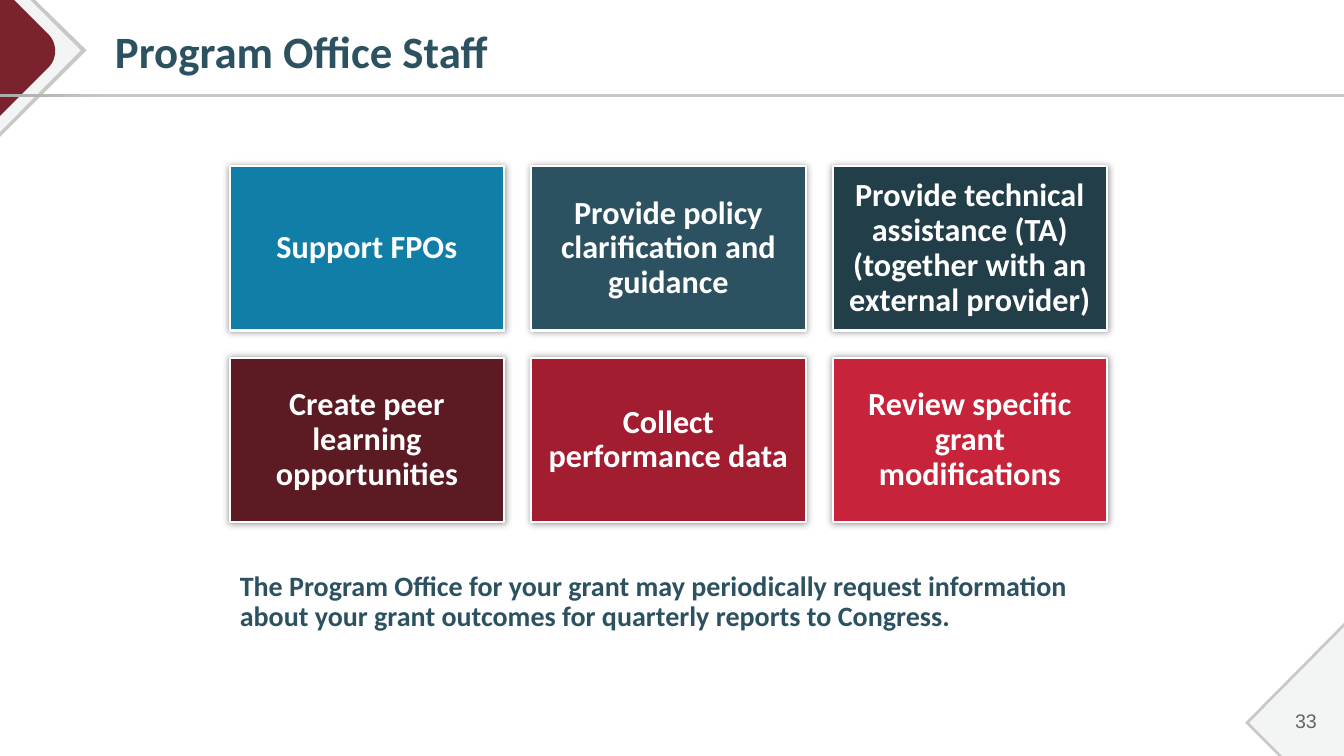
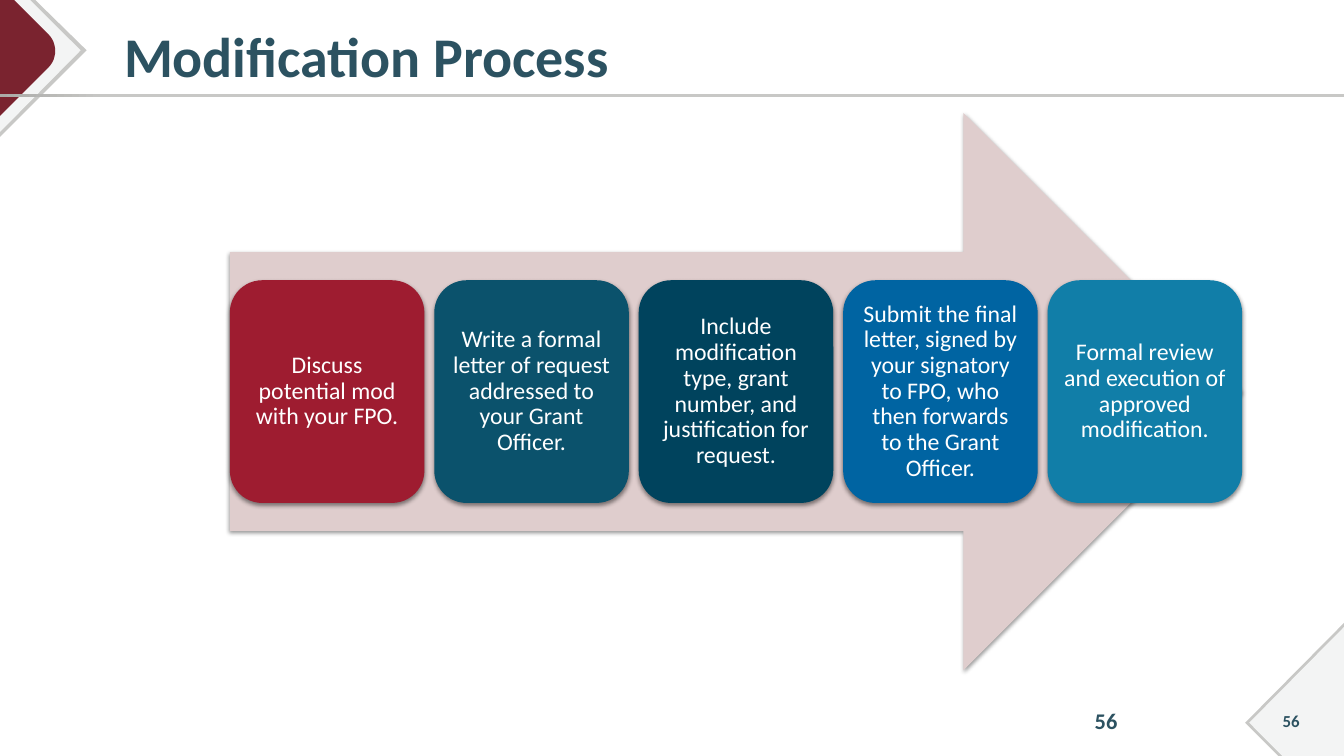
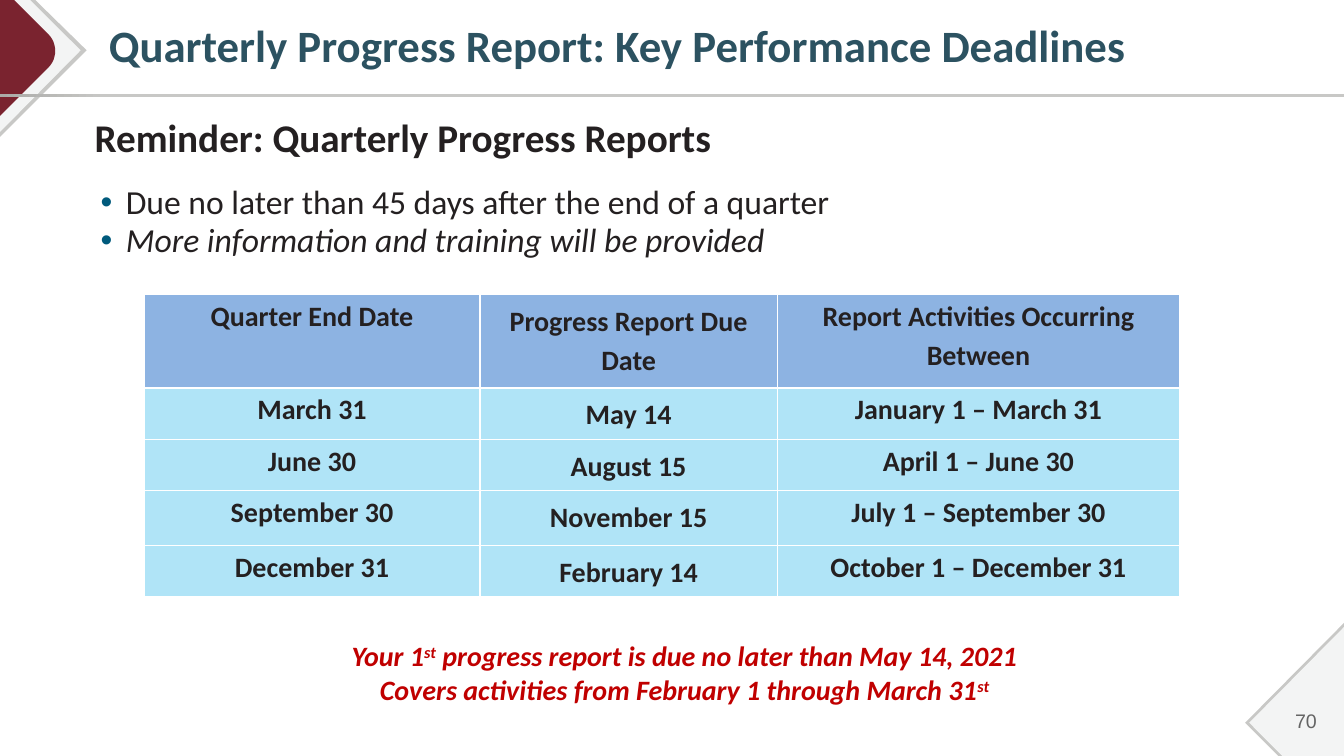
from lxml import etree
from pptx import Presentation
from pptx.dml.color import RGBColor
from pptx.enum.shapes import MSO_SHAPE
from pptx.enum.text import MSO_ANCHOR, PP_ALIGN
from pptx.oxml import parse_xml
from pptx.oxml.ns import nsdecls, qn
from pptx.util import Inches, Pt

RECT, ROUND_RECT = MSO_SHAPE.RECTANGLE, MSO_SHAPE.ROUNDED_RECTANGLE
RIGHT_ARROW = MSO_SHAPE.RIGHT_ARROW
TOP, MIDDLE = MSO_ANCHOR.TOP, MSO_ANCHOR.MIDDLE
LEFT, CENTER, RIGHT = PP_ALIGN.LEFT, PP_ALIGN.CENTER, PP_ALIGN.RIGHT

WIDTH, HEIGHT = 13.33, 7.5
SLATE, INK, WHITE, RED = "2C5261", "242021", "FFFFFF", "C00000"
SILVER, MIST, MAROON, GREY = "C8C8C6", "F3F4F4", "7A232F", "646464"
BLUE, NAVY, BULLET_BLUE = "117EA8", "00435D", "005A7C"
HEADER_FILL, ROW_FILL = "8DB3E2", "B0E4F7"

CORNERS = [
    (SILVER, [(13.33, 6.18), (13.33, 7.5), (12.68, 7.5), (12.35, 7.17)]),
    (MIST, [(13.33, 6.22), (13.33, 7.5), (12.72, 7.5), (12.39, 7.17)]),
    (SILVER, [(0, 0), (0.35, 0), (0.86, 0.5), (0, 1.36)]),
    (MIST, [(0, 0), (0.3, 0), (0.8, 0.5), (0, 1.31)]),
]
ROUNDED_TIP = [(0.48, 0.34), (0.57, 0.43), (0.57, 0.58), (0.48, 0.67)]

DUTIES = [
    ("Support FPOs", BLUE),
    ("Provide policy clarification and guidance", SLATE),
    ("Provide technical assistance (TA) (together with an external provider)", "213E49"),
    ("Create peer learning opportunities", "5C1A23"),
    ("Collect performance data", "A31D30"),
    ("Review specific grant modifications", "C7233A"),
]
STEPS = [
    ("Discuss potential mod with your FPO.", "9E1C30"),
    ("Write a formal letter of request addressed to your Grant Officer.", "0B526C"),
    ("Include modification type, grant number, and justification for request.", NAVY),
    ("Submit the final letter, signed by your signatory to FPO, who then "
     "forwards to the Grant Officer.", "0064A2"),
    ("Formal review and execution of approved modification.", BLUE),
]
DEADLINES = [
    ("Quarter End Date", "Progress Report Due Date", "Report Activities Occurring Between"),
    ("March 31", "May 14", "January 1 – March 31"),
    ("June 30", "August 15", "April 1 – June 30"),
    ("September 30", "November 15", "July 1 – September 30"),
    ("December 31", "February 14", "October 1 – December 31"),
]


def rgb(code):
    return RGBColor.from_string(code)


def inches(box):
    return [Inches(length) for length in box]


def style(size, color, name="Calibri", **extra):
    return {"size": Pt(size), "color": color, "name": name, **extra}


def add_run(paragraph, text, look, raised=False):
    run = paragraph.add_run()
    run.text = text
    for key, value in look.items():
        if key == "color":
            run.font.color.rgb = rgb(value)
        else:
            setattr(run.font, key, value)
    if raised:
        run._r.get_or_add_rPr().set("baseline", "30000")


def set_frame(frame, anchor=TOP, margins=(0.1, 0.05, 0.1, 0.05)):
    frame.word_wrap = True
    frame.vertical_anchor = anchor
    sides = ("margin_left", "margin_top", "margin_right", "margin_bottom")
    for side, margin in zip(sides, inches(margins)):
        setattr(frame, side, margin)


def write(frame, text, look, align=LEFT, spacing=1.0):
    """Fill the first paragraph of a frame."""
    paragraph = frame.paragraphs[0]
    paragraph.alignment = align
    paragraph.line_spacing = spacing
    add_run(paragraph, text, look)


def add_text_box(slide, box, anchor=TOP, margins=(0.1, 0.05, 0.1, 0.05)):
    frame = slide.shapes.add_textbox(*inches(box)).text_frame
    set_frame(frame, anchor, margins)
    return frame


def add_shadow(shape, alpha, blur, distance):
    """Drop a black shadow downwards; alpha in percent, lengths in points."""
    effects = shape._element.spPr.find(qn("a:effectLst"))
    shadow = etree.SubElement(
        effects, qn("a:outerShdw"), blurRad=str(Pt(blur)), dist=str(Pt(distance)),
        dir="5400000", algn="ctr", rotWithShape="0")
    black = etree.SubElement(shadow, qn("a:srgbClr"), val="000000")
    etree.SubElement(black, qn("a:alpha"), val=str(alpha * 1000))


def paint(shape, fill):
    shape.shadow.inherit = False
    shape.fill.solid()
    shape.fill.fore_color.rgb = rgb(fill)
    shape.line.fill.background()


def add_shape(slide, kind, box, fill):
    shape = slide.shapes.add_shape(kind, *inches(box))
    paint(shape, fill)
    return shape


def add_polygon(slide, points, fill):
    corners = [inches(point) for point in points]
    builder = slide.shapes.build_freeform(*corners[0])
    builder.add_line_segments(corners[1:], close=True)
    paint(builder.convert_to_shape(), fill)


def curve(controls, count=12):
    """Return points along a cubic Bezier curve."""
    points = []
    for index in range(count + 1):
        t = index / count
        weights = ((1 - t) ** 3, 3 * t * (1 - t) ** 2, 3 * t * t * (1 - t), t ** 3)
        points.append([sum(w * c[axis] for w, c in zip(weights, controls)) for axis in (0, 1)])
    return points


def add_base_slide(prs, title, title_box, number, number_look, number_align=RIGHT,
                   title_size=32, title_anchor=TOP):
    """Add a slide with corner ornaments, title rule, title and page number."""
    slide = prs.slides.add_slide(prs.slide_layouts[6])
    for fill, points in CORNERS:
        add_polygon(slide, points, fill)
    add_polygon(slide, [(0, 0), (0.14, 0), *curve(ROUNDED_TIP), (0, 1.15)], MAROON)

    rule = add_shape(slide, RECT, (0, 0.93, WIDTH, 0.03), SILVER)
    rule.fill.gradient()
    rule.fill.gradient_angle = 0
    for stop, (position, color) in zip(rule.fill.gradient_stops, [(0, "ABABA8"), (0.08, SILVER)]):
        stop.position = position
        stop.color.rgb = rgb(color)

    heading = add_text_box(slide, title_box, title_anchor, (0.2, 0.05, 0.1, 0.05))
    write(heading, title, style(title_size, SLATE, bold=True), spacing=0.9)
    page = add_text_box(slide, (12.45, 6.95, 0.71, 0.4), MIDDLE)
    write(page, number, number_look, number_align)
    return slide


def add_duty_grid(slide, box, columns=3, gap=0.27):
    left, top, width, height = box
    rows = len(DUTIES) // columns
    card_width = (width - gap * (columns - 1)) / columns
    card_height = (height - gap * (rows - 1)) / rows
    for index, (duty, fill) in enumerate(DUTIES):
        row, column = divmod(index, columns)
        card = add_shape(slide, RECT, (left + column * (card_width + gap),
                                       top + row * (card_height + gap),
                                       card_width, card_height), fill)
        card.line.color.rgb = rgb(WHITE)
        card.line.width = Pt(1.5)
        add_shadow(card, 40, 5, 0)
        set_frame(card.text_frame, MIDDLE, [0.1] * 4)
        write(card.text_frame, duty, style(23, WHITE, bold=True), CENTER, 0.9)


def add_step_arrow(slide, box, step_width=1.93, step_height=2.21):
    left, top, width, height = box
    add_shadow(add_shape(slide, RIGHT_ARROW, box, "DFCDCD"), 40, 3, 1.4)
    pitch = (width - step_width) / (len(STEPS) - 1)
    step_top = top + (height - step_height) / 2
    for index, (text, fill) in enumerate(STEPS):
        step = add_shape(slide, ROUND_RECT,
                         (left + index * pitch, step_top, step_width, step_height), fill)
        add_shadow(step, 45, 3, 2)
        set_frame(step.text_frame, MIDDLE, [0.07] * 4)
        write(step.text_frame, text, style(17, WHITE), CENTER, 0.9)


def add_reminder(slide, box):
    frame = add_text_box(slide, box)
    write(frame, "Reminder: Quarterly Progress Reports", style(28, INK, bold=True), spacing=1.1)
    points = [
        ("Due no later than 45 days after the end of a quarter", 1.1, 12, False),
        ("More information and training will be provided", 0.95, 0, True),
    ]
    for text, spacing, before, italic in points:
        paragraph = frame.add_paragraph()
        properties = paragraph._p.get_or_add_pPr()
        properties.set("marL", str(Inches(0.31)))
        properties.set("indent", str(Inches(-0.25)))
        for bullet in (f'<a:buClr {nsdecls("a")}><a:srgbClr val="{BULLET_BLUE}"/></a:buClr>',
                       f'<a:buFont {nsdecls("a")} typeface="Arial"/>',
                       f'<a:buChar {nsdecls("a")} char="•"/>'):
            properties.append(parse_xml(bullet))
        paragraph.line_spacing = spacing
        paragraph.space_before = Pt(before)
        add_run(paragraph, text, style(24, INK, italic=italic))


def add_deadline_table(slide, box):
    table = slide.shapes.add_table(len(DEADLINES), len(DEADLINES[0]), *inches(box)).table
    table.horz_banding = False
    for column, width in zip(table.columns, inches((3.33, 2.95, 3.99))):
        column.width = width
    for row, height in zip(table.rows, inches((0.93, 0.51, 0.51, 0.54, 0.51))):
        row.height = height
    for row, texts in enumerate(DEADLINES):
        for column, text in enumerate(texts):
            cell = table.cell(row, column)
            cell.fill.solid()
            cell.fill.fore_color.rgb = rgb(ROW_FILL if row else HEADER_FILL)
            if column != 1:
                cell.margin_left = cell.margin_right = 0
                cell.margin_top = cell.margin_bottom = 0
            write(cell.text_frame, text, style(20, INK, bold=True), CENTER, 1.15)


def add_first_report_note(slide, box):
    frame = add_text_box(slide, box)
    lines = [
        ("Your 1", "st", " progress report is due no later than May 14, 2021"),
        ("Covers activities from February 1 through March 31", "st"),
    ]
    look = style(20, RED, bold=True, italic=True)
    for index, parts in enumerate(lines):
        paragraph = frame.add_paragraph() if index else frame.paragraphs[0]
        paragraph.alignment = CENTER
        for part in parts:
            add_run(paragraph, part, look, raised=part == "st")


def build_staff_slide(prs):
    slide = add_base_slide(prs, "Program Office Staff", (0.94, 0.25, 9.19, 0.76),
                           "33", style(14, GREY, "Arial"))
    add_duty_grid(slide, (2.28, 1.65, 8.7, 3.53))
    note = add_text_box(slide, (2.28, 5.63, 8.91, 1.09))
    write(note, "The Program Office for your grant may periodically request information "
          "about your grant outcomes for quarterly reports to Congress.",
          style(20, SLATE, bold=True), spacing=0.9)


def build_process_slide(prs):
    slide = add_base_slide(prs, "Modification Process", (1.03, 0.24, 11.92, 1.15),
                           "56", style(12, SLATE, bold=True), CENTER, title_size=40)
    second_number = add_text_box(slide, (10.27, 6.95, 1.4, 0.4), MIDDLE)
    write(second_number, "56", style(16, SLATE, bold=True), CENTER)
    add_step_arrow(slide, (2.28, 1.12, 10.04, 5.53))


def build_deadlines_slide(prs):
    slide = add_base_slide(prs, "Quarterly Progress Report: Key Performance Deadlines",
                           (0.88, 0.05, 12.12, 0.86), "70", style(14, GREY, "Arial"),
                           title_anchor=MIDDLE)
    add_reminder(slide, (0.84, 1.03, 11.44, 1.75))
    add_deadline_table(slide, (1.43, 2.92, 10.27, 3))
    add_first_report_note(slide, (3.25, 6.29, 7.08, 0.77))


def main():
    prs = Presentation()
    prs.slide_width, prs.slide_height = inches((WIDTH, HEIGHT))
    for build in (build_staff_slide, build_process_slide, build_deadlines_slide):
        build(prs)
    prs.save("out.pptx")


if __name__ == "__main__":
    main()
